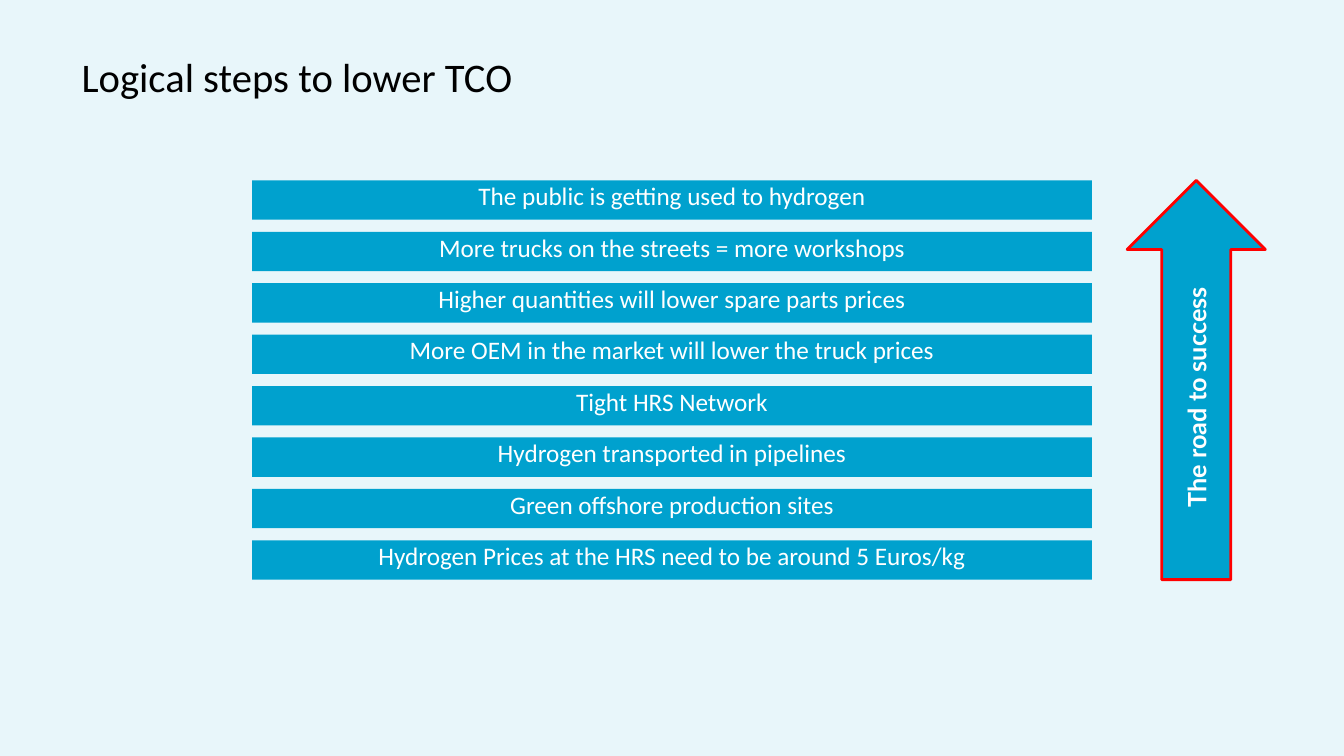
import pptx
import pptx.dml.color
import pptx.enum.shapes
import pptx.enum.text
import pptx.oxml.ns
import pptx.util
from lxml import etree

Inches = pptx.util.Inches
SHAPES = pptx.enum.shapes.MSO_SHAPE
ALIGN = pptx.enum.text.PP_ALIGN
ANCHOR = pptx.enum.text.MSO_ANCHOR

BLUE, WHITE, RED, BLACK = "00A1CE", "FFFFFF", "FF0000", "000000"
SLIDE_WIDTH, SLIDE_HEIGHT = 13.33, 7.5
STEPS = [
    "The public is getting used to hydrogen",
    "More trucks on the streets = more workshops",
    "Higher quantities will lower spare parts prices",
    "More OEM in the market will lower the truck prices",
    "Tight HRS Network",
    "Hydrogen transported in pipelines",
    "Green offshore production sites",
    "Hydrogen Prices at the HRS need to be around 5 Euros/kg",
]


def color(hex_string):
    return pptx.dml.color.RGBColor.from_string(hex_string)


def write(holder, text, size=18, font="Calibri", fill=WHITE, bold=False,
          align=ALIGN.CENTER, anchor=ANCHOR.TOP, insets=(0, 0, 0, 0)):
    frame = holder.text_frame
    frame.word_wrap = True
    frame.vertical_anchor = anchor
    (frame.margin_left, frame.margin_top,
     frame.margin_right, frame.margin_bottom) = map(Inches, insets)
    paragraph = frame.paragraphs[0]
    paragraph.alignment = align
    run = paragraph.add_run()
    run.text = text
    run.font.size = pptx.util.Pt(size)
    run.font.name = font
    run.font.bold = bold
    run.font.color.rgb = color(fill)


def add_block(slide, preset, box, fill, line=None):
    block = slide.shapes.add_shape(preset, *map(Inches, box))
    block.shadow.inherit = False
    block.fill.solid()
    block.fill.fore_color.rgb = color(fill)
    if line:
        block.line.color.rgb = color(line)
        block.line.width = pptx.util.Pt(2)
    else:
        block.line.fill.background()
    return block


def add_background(slide, box):
    slide.background.fill.solid()
    slide.background.fill.fore_color.rgb = color(BLUE)
    # White veil, 91 % opaque
    veil = add_block(slide, SHAPES.RECTANGLE, box, WHITE)
    tint = veil.fill._xPr.find(".//" + pptx.oxml.ns.qn("a:srgbClr"))
    etree.SubElement(tint, pptx.oxml.ns.qn("a:alpha"), val="91000")


def add_title(slide, box):
    title = slide.shapes.add_textbox(*map(Inches, box))
    write(title, "Logical steps to lower TCO", size=29, fill=BLACK,
          align=ALIGN.LEFT, insets=(0, 0.05, 0.1, 0.05))


def add_steps(slide, box, gap=0.12):
    left, top, width, height = box
    bar_height = (height + gap) / len(STEPS) - gap
    for index, step in enumerate(STEPS):
        bar_top = top + index * (bar_height + gap)
        bar = add_block(slide, SHAPES.RECTANGLE,
                        (left, bar_top, width, bar_height), BLUE)
        write(bar, step)


def add_road(slide, box):
    # A right arrow turned upwards about the centre of the box
    left, top, width, height = box
    turned = (left + (width - height) / 2, top + (height - width) / 2, height, width)
    road = add_block(slide, SHAPES.RIGHT_ARROW, turned, BLUE, line=RED)
    road.rotation = 270
    write(road, "The road to success", font="Lato", bold=True, anchor=ANCHOR.MIDDLE)


def main():
    deck = pptx.Presentation()
    deck.slide_width = Inches(SLIDE_WIDTH)
    deck.slide_height = Inches(SLIDE_HEIGHT)
    slide = deck.slides.add_slide(deck.slide_layouts[6])
    add_background(slide, (0, 0, SLIDE_WIDTH, SLIDE_HEIGHT))
    add_title(slide, (0.81, 0.47, 11.5, 1.12))
    add_steps(slide, (2.5, 1.79, 8.33, 3.96))
    add_road(slide, (11.18, 1.79, 1.37, 3.96))
    deck.save("out.pptx")


if __name__ == "__main__":
    main()
